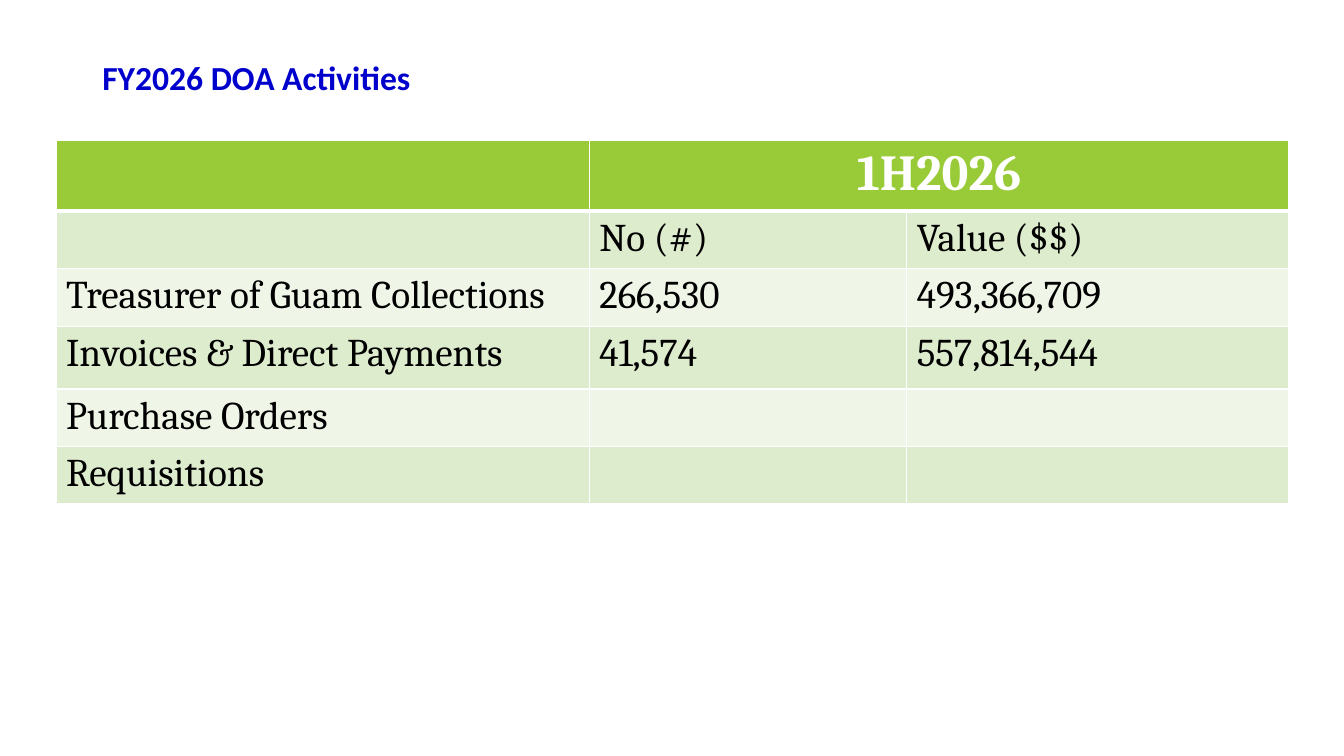
import pptx
import pptx.dml.color
import pptx.enum.text
import pptx.oxml
import pptx.oxml.ns
import pptx.util

Cm = pptx.util.Cm
Pt = pptx.util.Pt

WHITE = "FFFFFF"
HEADER_GREEN = "99CB38"
BAND_GREENS = ("DEECCE", "EFF6E8")
COLUMN_WIDTHS = (13.44, 8.0, 9.63)
ROW_HEIGHTS = (1.68, 1.4, 1.47, 1.57, 1.4, 1.4)
ACTIVITIES = (
    ("", "1H2026", ""),
    ("", "No (#)", "Value ($$)"),
    ("Treasurer of Guam Collections", "266,530", "493,366,709"),
    ("Invoices & Direct Payments", "41,574", "557,814,544"),
    ("Purchase Orders", "", ""),
    ("Requisitions", "", ""),
)


def color(hex_code):
    """Return the RGB colour for a hex string."""
    return pptx.dml.color.RGBColor.from_string(hex_code)


def format_text(paragraph, font_name, size, hex_code, bold):
    """Set the font of every run in a paragraph."""
    for run in paragraph.runs:
        run.font.name = font_name
        run.font.size = Pt(size)
        run.font.bold = bold
        run.font.color.rgb = color(hex_code)


def add_title(slide, text):
    """Add the slide heading."""
    title = slide.shapes.add_textbox(Cm(2.33), Cm(1.01), Cm(29.21), Cm(1.99))
    frame = title.text_frame
    frame.word_wrap = True
    frame.vertical_anchor = pptx.enum.text.MSO_ANCHOR.MIDDLE
    frame.text = text
    frame.paragraphs[0].line_spacing = 0.9
    format_text(frame.paragraphs[0], "Calibri", 24, "0000CC", True)


def add_borders(cell, bottom_width):
    """Draw white lines on all four sides of a cell."""
    properties = cell._tc.get_or_add_tcPr()
    for side, width in (("L", 1), ("R", 1), ("T", 1), ("B", bottom_width)):
        properties.append(pptx.oxml.parse_xml(
            f'<a:ln{side} {pptx.oxml.ns.nsdecls("a")} w="{Pt(width)}">'
            f'<a:solidFill><a:srgbClr val="{WHITE}"/></a:solidFill></a:ln{side}>'
        ))


def fill_cell(cell, text, is_header, fill_hex):
    """Write and style one table cell."""
    add_borders(cell, 3 if is_header else 1)
    cell.fill.solid()
    cell.fill.fore_color.rgb = color(fill_hex)
    if not text:
        return
    cell.text_frame.text = text
    paragraph = cell.text_frame.paragraphs[0]
    if is_header:
        paragraph.alignment = pptx.enum.text.PP_ALIGN.CENTER
        format_text(paragraph, "Cambria", 36, WHITE, True)
    else:
        format_text(paragraph, "Cambria", 28, "000000", False)


def add_activity_table(slide):
    """Add the table of activities with its merged period heading."""
    activities = slide.shapes.add_table(
        len(ACTIVITIES), len(COLUMN_WIDTHS), Cm(1.41), Cm(3.54),
        Cm(sum(COLUMN_WIDTHS)), Cm(sum(ROW_HEIGHTS)),
    ).table
    for column, width in zip(activities.columns, COLUMN_WIDTHS):
        column.width = Cm(width)
    for row, height in zip(activities.rows, ROW_HEIGHTS):
        row.height = Cm(height)
    activities.cell(0, 1).merge(activities.cell(0, 2))
    for row_index, texts in enumerate(ACTIVITIES):
        is_header = row_index == 0
        fill_hex = HEADER_GREEN if is_header else BAND_GREENS[(row_index - 1) % 2]
        for column_index, text in enumerate(texts):
            fill_cell(activities.cell(row_index, column_index), text, is_header, fill_hex)


def main():
    """Build the activities slide and save it."""
    presentation = pptx.Presentation()
    presentation.slide_width = Cm(33.87)
    presentation.slide_height = Cm(19.05)
    slide = presentation.slides.add_slide(presentation.slide_layouts[6])
    add_title(slide, "FY2026 DOA Activities")
    add_activity_table(slide)
    presentation.save("out.pptx")


if __name__ == "__main__":
    main()
